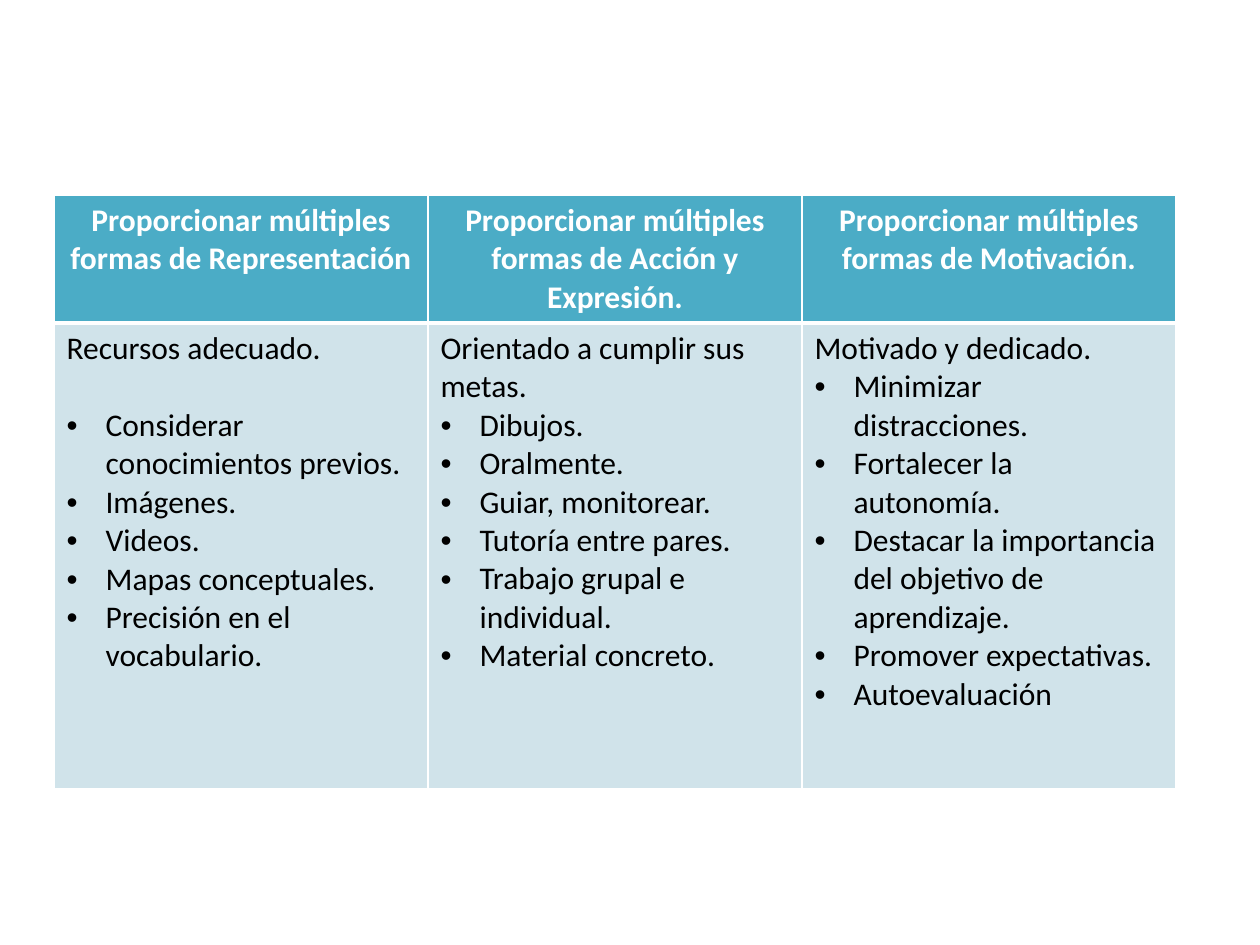
from lxml import etree
from pptx import Presentation
from pptx import util as u
from pptx.dml.color import RGBColor
from pptx.enum import text
from pptx.oxml.ns import qn

PX = 914400 // 126
FONT = "Calibri"
WHITE, BLACK, TEAL, PALE = "FFFFFF", "000000", "4BACC6", "D0E3EA"
TABLE_LEFT, TABLE_TOP, COLUMN_WIDTH = 54, 195, 374
HEADER_HEIGHT, BODY_HEIGHT = 125, 466
BULLET_INDENT = 39

# heading, opening line, points before the first bullet, bullets
PRINCIPLES = [
    ("Proporcionar múltiples formas de Representación", "Recursos adecuado.", 22,
     ["Considerar conocimientos previos.", "Imágenes.", "Videos.",
      "Mapas conceptuales.", "Precisión en el vocabulario."]),
    ("Proporcionar múltiples formas de Acción y Expresión.",
     "Orientado a cumplir sus metas.", 0,
     ["Dibujos.", "Oralmente.", "Guiar, monitorear.", "Tutoría entre pares.",
      "Trabajo grupal e individual.", "Material concreto."]),
    ("Proporcionar múltiples formas de Motivación.", "Motivado y dedicado.", 0,
     ["Minimizar distracciones.", "Fortalecer la autonomía.",
      "Destacar la importancia del objetivo de aprendizaje.",
      "Promover expectativas.", "Autoevaluación"]),
]


def px(count):
    return u.Emu(count * PX)


def color(hex_code):
    return RGBColor.from_string(hex_code)


def add_words(paragraph, words, hex_code, bold=False):
    run = paragraph.add_run()
    run.text = words
    run.font.name = FONT
    run.font.size = u.Pt(18)
    run.font.bold = bold
    run.font.color.rgb = color(hex_code)


def add_bullet(paragraph):
    properties = paragraph._p.get_or_add_pPr()
    properties.set("marL", str(px(BULLET_INDENT)))
    properties.set("indent", str(-px(BULLET_INDENT)))
    etree.SubElement(properties, qn("a:buFont"), typeface="Arial")
    etree.SubElement(properties, qn("a:buChar"), char="•")


def style_cell(cell, fill, top=1, bottom=1):
    """Fill the cell and give it white borders, widths in points."""
    cell.fill.solid()
    cell.fill.fore_color.rgb = color(fill)
    borders = [("L", 1), ("R", 1), ("T", top), ("B", bottom)]
    for position, (side, width) in enumerate(borders):
        line = etree.Element(qn(f"a:ln{side}"), w=str(u.Pt(width)))
        solid = etree.SubElement(line, qn("a:solidFill"))
        etree.SubElement(solid, qn("a:srgbClr"), val=WHITE)
        cell._tc.get_or_add_tcPr().insert(position, line)


def fill_header(cell, heading):
    style_cell(cell, TEAL, bottom=3)
    paragraph = cell.text_frame.paragraphs[0]
    paragraph.alignment = text.PP_ALIGN.CENTER
    add_words(paragraph, heading, WHITE, bold=True)


def fill_body(cell, opening, gap, bullets):
    style_cell(cell, PALE, top=3)
    frame = cell.text_frame
    add_words(frame.paragraphs[0], opening, BLACK)
    for index, bullet in enumerate(bullets):
        paragraph = frame.add_paragraph()
        if index == 0 and gap:
            paragraph.space_before = u.Pt(gap)
        add_bullet(paragraph)
        add_words(paragraph, bullet, BLACK)


def add_principles_table(slide):
    count = len(PRINCIPLES)
    table = slide.shapes.add_table(
        2, count, px(TABLE_LEFT), px(TABLE_TOP),
        px(COLUMN_WIDTH * count), px(HEADER_HEIGHT + BODY_HEIGHT)).table
    table.horz_banding = False
    table.rows[0].height = px(HEADER_HEIGHT)
    table.rows[1].height = px(BODY_HEIGHT)
    for column, (heading, opening, gap, bullets) in enumerate(PRINCIPLES):
        table.columns[column].width = px(COLUMN_WIDTH)
        fill_header(table.cell(0, column), heading)
        fill_body(table.cell(1, column), opening, gap, bullets)


def main():
    deck = Presentation()
    deck.slide_width, deck.slide_height = px(1260), px(945)
    slide = deck.slides.add_slide(deck.slide_layouts[6])
    add_principles_table(slide)
    deck.save("out.pptx")


if __name__ == "__main__":
    main()
